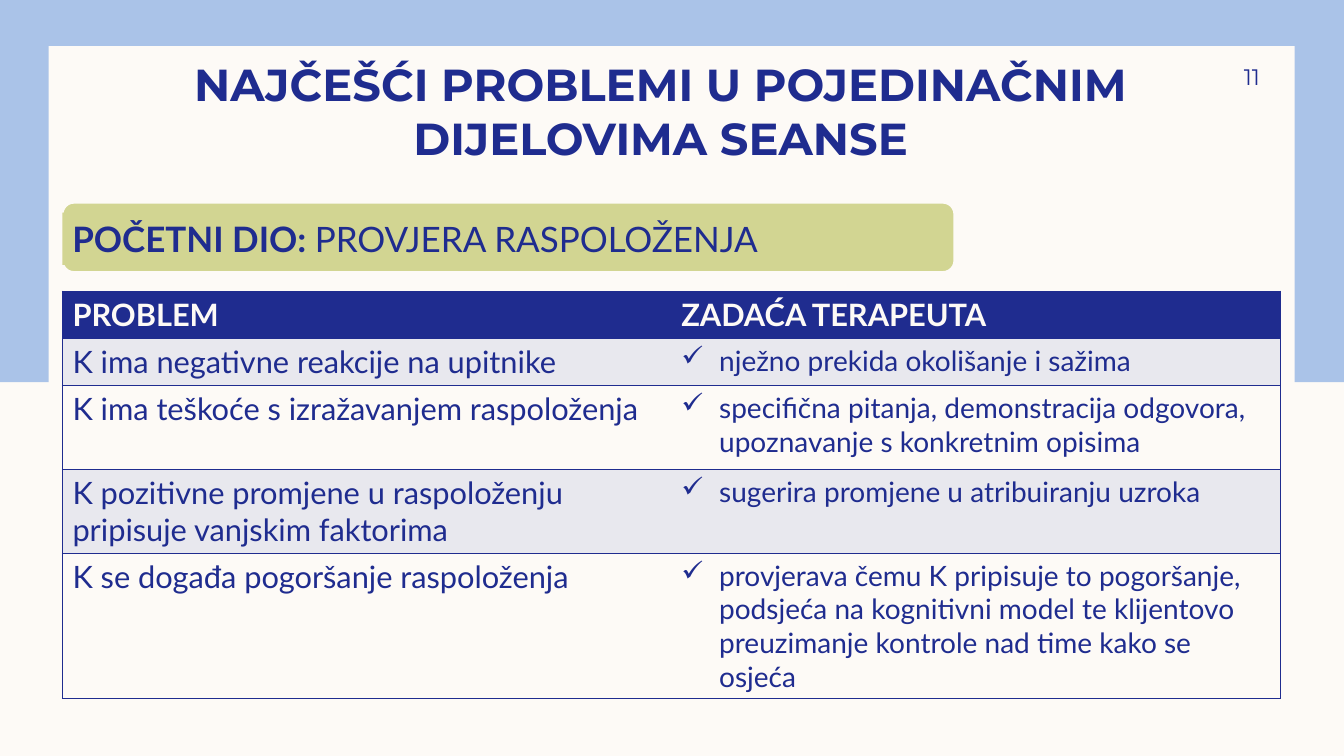
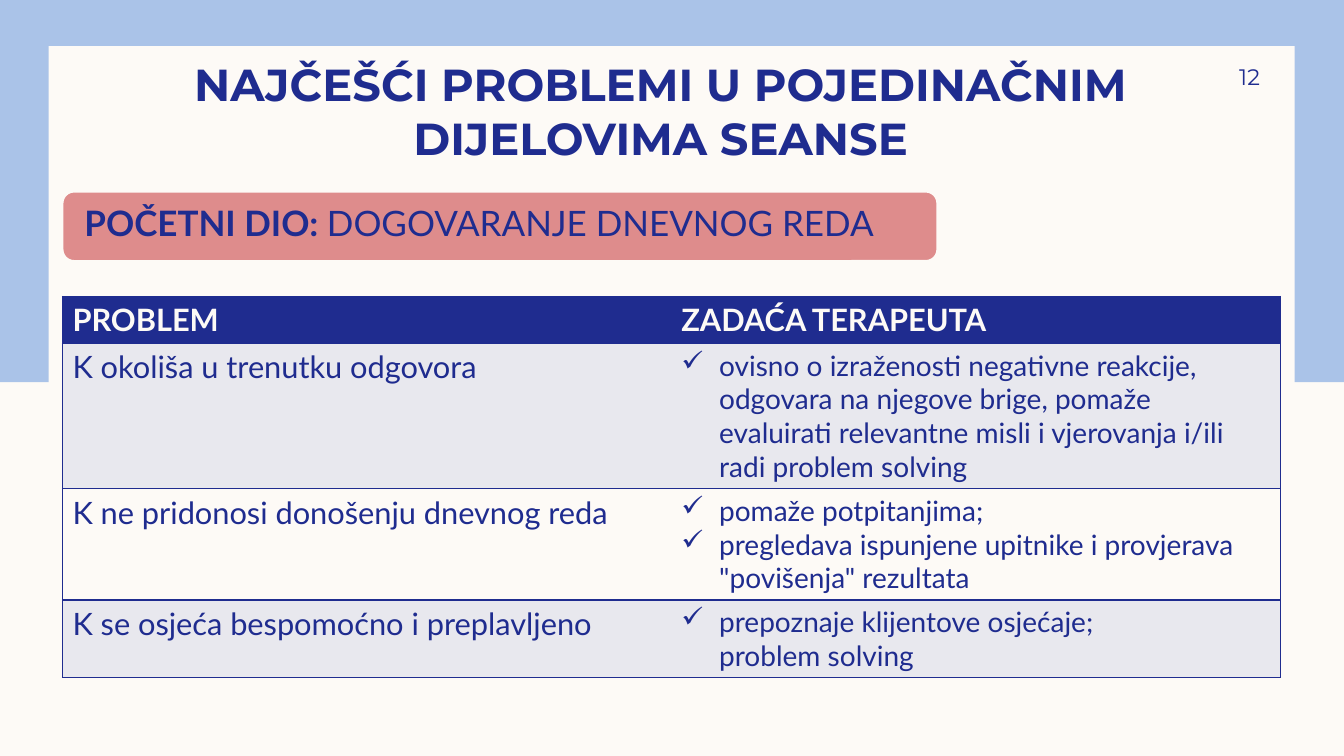
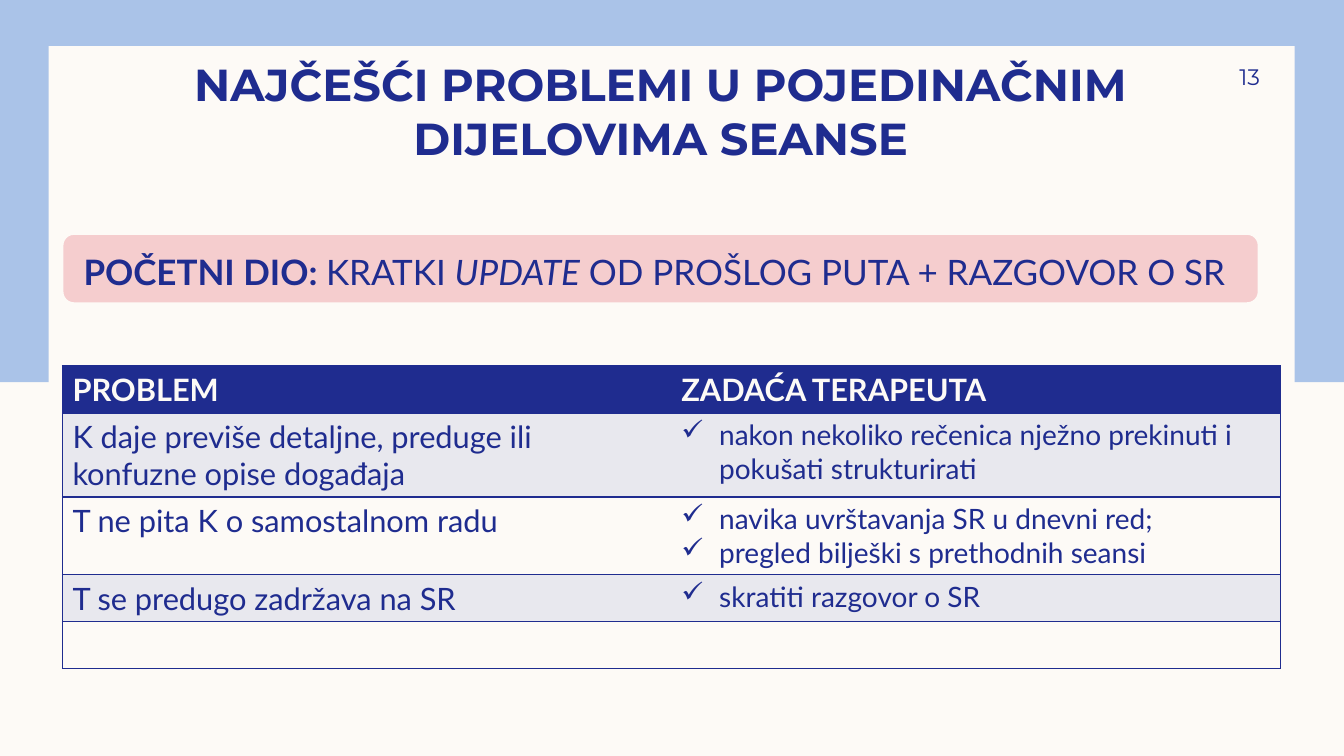
from lxml.etree import SubElement
from pptx import Presentation
from pptx.dml.color import RGBColor
from pptx.enum.shapes import MSO_SHAPE
from pptx.enum.text import MSO_ANCHOR, MSO_AUTO_SIZE, PP_ALIGN
from pptx.oxml.ns import qn
from pptx.util import Pt

NAVY, CREAM, SKY, MIST = "1F2C8F", "FDFAF6", "AAC3E8", "E8E8EE"
HEADING, BODY = "Montserrat", "Lato"
TITLE = "NAJČEŠĆI PROBLEMI U POJEDINAČNIM DIJELOVIMA SEANSE"
HEADER = ("PROBLEM", ["ZADAĆA TERAPEUTA"], 33.6)
MARGIN, COLUMN = 44.6, 434.9


def paint(fill, color):
    fill.solid()
    fill.fore_color.rgb = RGBColor.from_string(color)


def write(paragraph, text, size=22, font=BODY, color=NAVY, bold=False,
          italic=False, align=None):
    if align is not None:
        paragraph.alignment = align
    for number, line in enumerate(text.split("\n")):
        if number:
            paragraph.add_line_break()
        run = paragraph.add_run()
        run.text = line
        run.font.size = Pt(size)
        run.font.name = font
        run.font.bold = bold
        run.font.italic = italic
        run.font.color.rgb = RGBColor.from_string(color)


def add_tick(paragraph):
    properties = paragraph._p.get_or_add_pPr()
    properties.set("marL", str(Pt(27)))
    properties.set("indent", str(-Pt(27)))
    SubElement(properties, qn("a:buChar")).set("char", "✓")


def set_borders(cell, hidden_side):
    properties = cell._tc.get_or_add_tcPr()
    for side in "LRTB":
        border = SubElement(properties, qn(f"a:ln{side}"), w=str(Pt(1)))
        if side == hidden_side:
            SubElement(border, qn("a:noFill"))
        else:
            ink = SubElement(border, qn("a:solidFill"))
            SubElement(ink, qn("a:srgbClr"), val=NAVY)


class Deck:
    """Holds the shared style and the slide being built."""

    def __init__(self):
        self.presentation = Presentation()
        self.presentation.slide_width = Pt(960)
        self.presentation.slide_height = Pt(540)
        paint(self.presentation.slide_master.background.fill, CREAM)

    def start_slide(self, number):
        layout = self.presentation.slide_layouts[5]
        self.slide = self.presentation.slides.add_slide(layout)
        self.add_panel(MSO_SHAPE.RECTANGLE, -2, 0, 962, 273, SKY)
        self.add_panel(MSO_SHAPE.RECTANGLE, 34.7, 33, 890, 474.5, CREAM)
        self.add_number(number)
        self.add_title()

    def add_panel(self, outline, left, top, width, height, color, edge=None):
        panel = self.slide.shapes.add_shape(
            outline, Pt(left), Pt(top), Pt(width), Pt(height))
        panel.shadow.inherit = False
        paint(panel.fill, color)
        if edge:
            paint(panel.line.fill, edge)
            panel.line.width = Pt(1.5)
        else:
            panel.line.fill.background()

    def add_number(self, number):
        page = self.slide.shapes.add_textbox(
            Pt(815.8), Pt(36), Pt(84.2), Pt(37.4))
        frame = page.text_frame
        frame.word_wrap = True
        frame.vertical_anchor = MSO_ANCHOR.MIDDLE
        frame.margin_right = 0
        write(frame.paragraphs[0], str(number), size=16, font=HEADING,
              align=PP_ALIGN.RIGHT)

    def add_title(self):
        title = self.slide.shapes.title
        self.slide.shapes._spTree.append(title._element)
        title.left, title.top = Pt(128.2), Pt(36)
        title.width, title.height = Pt(687.6), Pt(81.4)
        frame = title.text_frame
        frame.auto_size = MSO_AUTO_SIZE.NONE
        frame.vertical_anchor = MSO_ANCHOR.BOTTOM
        frame.margin_top = frame.margin_bottom = 0
        write(frame.paragraphs[0], TITLE, size=32, font=HEADING, bold=True,
              align=PP_ALIGN.CENTER)

    def add_section(self, color, top, width, label_box, topics):
        self.add_panel(MSO_SHAPE.ROUNDED_RECTANGLE, MARGIN, top, width, 49.7,
                       color, edge=CREAM)
        left, label_top, label_width = label_box
        label = self.slide.shapes.add_textbox(
            Pt(left), Pt(label_top), Pt(label_width), Pt(37.4))
        paint(label.fill, color)
        frame = label.text_frame
        frame.word_wrap = True
        frame.auto_size = MSO_AUTO_SIZE.SHAPE_TO_FIT_TEXT
        paragraph = frame.paragraphs[0]
        write(paragraph, "POČETNI DIO: ", size=25, bold=True)
        for topic, italic in topics:
            write(paragraph, topic, size=25, italic=italic)

    def add_problems(self, top, problems):
        rows = [HEADER] + problems
        table = self.slide.shapes.add_table(
            len(rows), 2, Pt(MARGIN), Pt(top), Pt(2 * COLUMN),
            Pt(sum(height for _, _, height in rows))).table
        table.horz_banding = False
        for column in table.columns:
            column.width = Pt(COLUMN)
        for index, (problem, tasks, height) in enumerate(rows):
            table.rows[index].height = Pt(height)
            band = MIST if index % 2 else CREAM
            for cell, hidden_side in zip(table.rows[index].cells, "RL"):
                set_borders(cell, hidden_side)
                paint(cell.fill, band if index else NAVY)
            problem_cell, task_cell = table.rows[index].cells
            style = {} if index else {"color": CREAM, "bold": True}
            if problem:
                write(problem_cell.text_frame.paragraphs[0], problem, **style)
            frame = task_cell.text_frame
            for order, task in enumerate(tasks):
                paragraph = frame.add_paragraph() if order else frame.paragraphs[0]
                if index:
                    add_tick(paragraph)
                write(paragraph, task, size=20 if index else 22, **style)


SECTIONS = [
    {"bar": ("D2D592", 144.7, 637.2, (44.6, 151.9, 541.4),
             [("PROVJERA RASPOLOŽENJA", False)]),
     "top": 208.1,
     "problems": [
         ("K ima negativne reakcije na upitnike",
          ["nježno prekida okolišanje i sažima"], 33.6),
         ("K ima teškoće s izražavanjem raspoloženja",
          ["specifična pitanja, demonstracija odgovora, "
           "upoznavanje s konkretnim opisima"], 60),
         ("K pozitivne promjene u raspoloženju \npripisuje vanjskim faktorima",
          ["sugerira promjene u atribuiranju uzroka"], 60),
         ("K se događa pogoršanje raspoloženja",
          ["provjerava čemu K pripisuje to pogoršanje, podsjeća na kognitivni "
           "model te klijentovo preuzimanje kontrole nad time kako se osjeća"],
          103.2)]},
    {"bar": ("DE8C8C", 136.8, 625, (53.3, 140.4, 607),
             [("DOGOVARANJE DNEVNOG REDA", False)]),
     "top": 211.7,
     "problems": [
         ("K okoliša u trenutku odgovora",
          ["ovisno o izraženosti negativne reakcije, odgovara na njegove brige, "
           "pomaže evaluirati relevantne misli i vjerovanja i/ili radi "
           "problem solving"], 103.2),
         ("K ne pridonosi donošenju dnevnog reda",
          ["pomaže potpitanjima;",
           "pregledava ispunjene upitnike i provjerava \"povišenja\" rezultata"],
          79.2),
         ("K se osjeća bespomoćno i preplavljeno",
          ["prepoznaje klijentove osjećaje; \nproblem solving"], 55.2)]},
    {"bar": ("F5CDCE", 167, 854.6, (52.6, 175.7, 833),
             [("KRATKI ", False), ("UPDATE", True),
              (" OD PROŠLOG PUTA + RAZGOVOR O SR", False)]),
     "top": 261.4,
     "problems": [
         ("K daje previše detaljne, preduge ili konfuzne opise događaja",
          ["nakon nekoliko rečenica nježno prekinuti i pokušati strukturirati"],
          60),
         ("T ne pita K o samostalnom radu",
          ["navika uvrštavanja SR u dnevni red;",
           "pregled bilješki s prethodnih seansi"], 55.2),
         ("T se predugo zadržava na SR", ["skratiti razgovor o SR"], 33.6),
         ("", [], 33.6)]},
]


def main():
    deck = Deck()
    for number, section in enumerate(SECTIONS, start=11):
        deck.start_slide(number)
        deck.add_problems(section["top"], section["problems"])
        deck.add_section(*section["bar"])
    deck.presentation.save("out.pptx")


if __name__ == "__main__":
    main()
